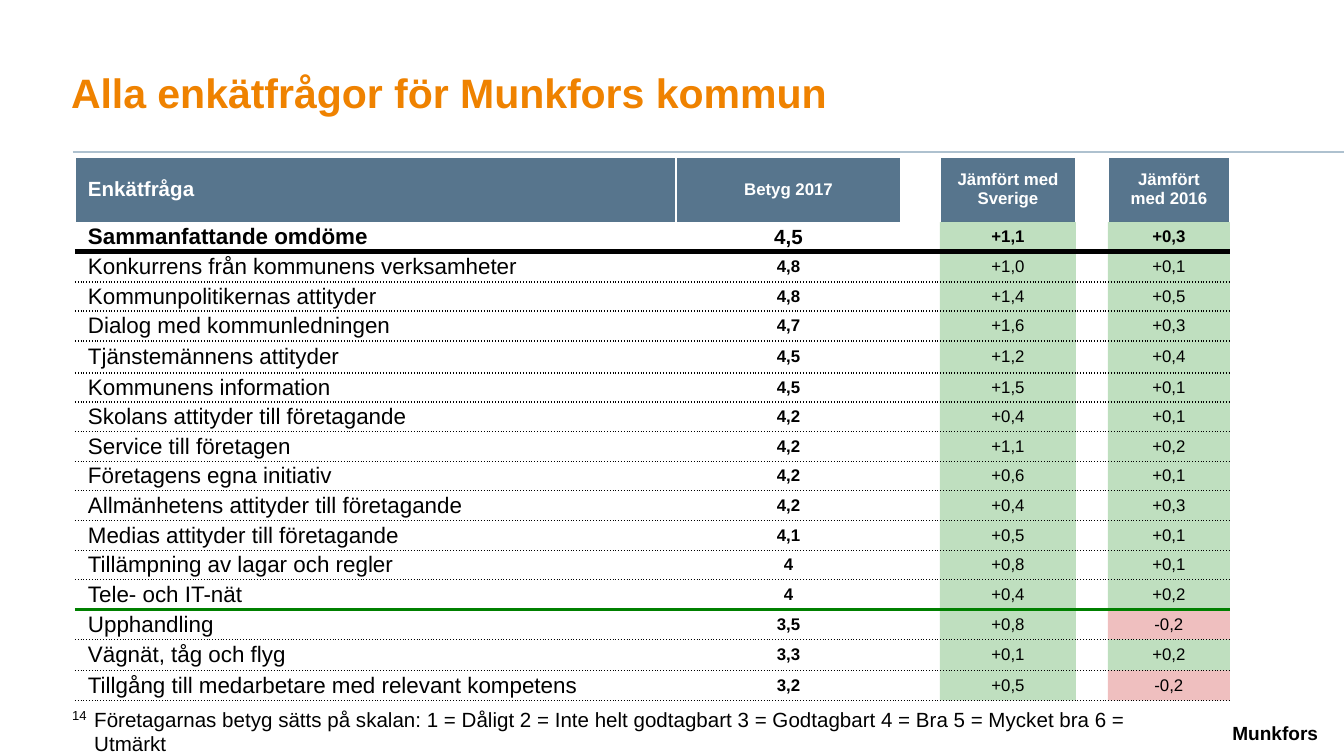
from dataclasses import dataclass
from typing import NamedTuple, Optional

from lxml.etree import SubElement
from pptx import Presentation
from pptx.dml.color import RGBColor
from pptx.enum.shapes import MSO_CONNECTOR as Link
from pptx.enum.text import MSO_ANCHOR as Anchor, MSO_AUTO_SIZE as Fit, PP_ALIGN as Align
from pptx.oxml.ns import qn
from pptx.util import Emu, Pt

SCALE = 914400 / 134.4
FONT = "Arial"
BLACK, WHITE, ORANGE = "000000", "FFFFFF", "EF8200"
SLATE, PALE, GREEN, RED = "57758D", "AEC1CF", "008000", "C00000"

COLS = [601, 225, 39, 136, 32, 122]
HEAD_H = 65
ROWS = [30, 30, 29, 30, 32, 29, 30, 30, 29, 30, 30, 29, 30, 30, 31, 30]
HEADS = ["Enkätfråga", "Betyg 2017", "", "Jämfört med Sverige", "", "Jämfört med 2016"]


class Score(NamedTuple):
    topic: str
    grade: str
    nation: str
    year: str


SCORES = [
    Score("Sammanfattande omdöme", "4,5", "+1,1", "+0,3"),
    Score("Konkurrens från kommunens verksamheter", "4,8", "+1,0", "+0,1"),
    Score("Kommunpolitikernas attityder", "4,8", "+1,4", "+0,5"),
    Score("Dialog med kommunledningen", "4,7", "+1,6", "+0,3"),
    Score("Tjänstemännens attityder", "4,5", "+1,2", "+0,4"),
    Score("Kommunens information", "4,5", "+1,5", "+0,1"),
    Score("Skolans attityder till företagande", "4,2", "+0,4", "+0,1"),
    Score("Service till företagen", "4,2", "+1,1", "+0,2"),
    Score("Företagens egna initiativ", "4,2", "+0,6", "+0,1"),
    Score("Allmänhetens attityder till företagande", "4,2", "+0,4", "+0,3"),
    Score("Medias attityder till företagande", "4,1", "+0,5", "+0,1"),
    Score("Tillämpning av lagar och regler", "4", "+0,8", "+0,1"),
    Score("Tele- och IT-nät", "4", "+0,4", "+0,2"),
    Score("Upphandling", "3,5", "+0,8", "-0,2"),
    Score("Vägnät, tåg och flyg", "3,3", "+0,1", "+0,2"),
    Score("Tillgång till medarbetare med relevant kompetens", "3,2", "+0,5", "-0,2"),
]


@dataclass
class Rule:
    color: str
    width: int = 1
    dash: str = "solid"


DOTS = Rule(BLACK, dash="sysDot")
EDGE = Rule(WHITE)
# Rules drawn below certain body rows; all the others are dotted.
BREAKS = {0: Rule(BLACK, 3), 12: Rule(GREEN, 2)}


@dataclass
class Style:
    size: float
    bold: bool = False
    color: str = BLACK
    align: Align = Align.LEFT


@dataclass
class Note:
    text: str
    box: tuple[int, int, int, int]
    style: Style
    anchor: Anchor = Anchor.TOP
    inset: bool = True
    wrap: bool = True


NOTES = [
    Note("Munkfors", (696, 704, 622, 40), Style(10.2, True, align=Align.RIGHT),
         Anchor.BOTTOM, inset=False),
    Note("14", (59, 707, 46, 17), Style(7), Anchor.MIDDLE),
    Note("Företagarnas betyg sätts på skalan: 1 = Dåligt 2 = Inte helt godtagbart "
         "3 = Godtagbart 4 = Bra 5 = Mycket bra 6 = Utmärkt",
         (81, 700, 1134, 39), Style(11), wrap=False),
]


def px(n: int) -> Emu:
    return Emu(round(n * SCALE))


def rgb(code: str) -> RGBColor:
    return RGBColor.from_string(code)


def put(frame, text: str, style: Style) -> None:
    frame.text = text
    para = frame.paragraphs[0]
    para.alignment = style.align
    font = para.font
    font.name, font.size, font.bold = FONT, Pt(style.size), style.bold
    font.color.rgb = rgb(style.color)


def place(shape, box: tuple[int, int, int, int]) -> None:
    shape.left, shape.top, shape.width, shape.height = map(px, box)


def pad(frame, side: int, top: int, base: int) -> None:
    frame.margin_left = frame.margin_right = px(side)
    frame.margin_top, frame.margin_bottom = px(top), px(base)


def add_title(slide, text: str) -> None:
    title = slide.shapes.title
    place(title, (71, 20, 1004, 102))
    frame = title.text_frame
    put(frame, text, Style(22, True, ORANGE))
    frame.auto_size = Fit.NONE
    frame.vertical_anchor = Anchor.BOTTOM
    pad(frame, 0, 0, 5)


def add_line(slide) -> None:
    line = slide.shapes.add_connector(Link.STRAIGHT, px(73), px(152), px(1344), px(152))
    line.line.color.rgb = rgb(PALE)
    line.line.width = Pt(1)
    SubElement(line._element.spPr, qn("a:effectLst"))


def add_note(slide, note: Note) -> None:
    frame = slide.shapes.add_textbox(*map(px, note.box)).text_frame
    put(frame, note.text, note.style)
    frame.word_wrap = note.wrap
    frame.vertical_anchor = note.anchor
    if not note.inset:
        pad(frame, 0, 0, 0)


def border(cell, **sides: Optional[Rule]) -> None:
    """Set the sides L, R, T and B; a side left out gets no line."""
    props = cell._tc.get_or_add_tcPr()
    for side in "LRTB":
        rule = sides.get(side)
        line = SubElement(props, qn(f"a:ln{side}"))
        if rule is None:
            SubElement(line, qn("a:noFill"))
            continue
        line.set("w", str(Pt(rule.width)))
        fill = SubElement(line, qn("a:solidFill"))
        SubElement(fill, qn("a:srgbClr"), val=rule.color)
        SubElement(line, qn("a:prstDash"), val=rule.dash)


def paint(cell, color: Optional[str], alpha: int = 100) -> None:
    if color is None:
        cell.fill.background()
        return
    cell.fill.solid()
    cell.fill.fore_color.rgb = rgb(color)
    if alpha < 100:
        tone = cell._tc.tcPr.find(f"{qn('a:solidFill')}/{qn('a:srgbClr')}")
        SubElement(tone, qn("a:alpha"), val=str(alpha * 1000))


def fill_cell(cell, text: str, style: Style) -> None:
    put(cell.text_frame, text, style)
    cell.vertical_anchor = Anchor.MIDDLE
    pad(cell, 13, 0, 0)


def add_grid(slide) -> None:
    frame = slide.shapes.add_table(len(SCORES) + 1, len(COLS), px(75), px(157),
                                   px(sum(COLS)), px(HEAD_H + sum(ROWS)))
    grid = frame.table
    grid.first_row = grid.horz_banding = False
    for col, width in zip(grid.columns, COLS):
        col.width = px(width)
    for row, height in zip(grid.rows, [HEAD_H, *ROWS]):
        row.height = px(height)

    for c, text in enumerate(HEADS):
        cell = grid.cell(0, c)
        fill_cell(cell, text, Style(9 if c else 11, True, WHITE,
                                    Align.CENTER if c else Align.LEFT))
        border(cell, L=EDGE, R=EDGE, T=EDGE)
        paint(cell, SLATE if text else None)

    for r, score in enumerate(SCORES):
        above = BREAKS.get(r - 1, DOTS) if r else None
        texts = [score.topic, score.grade, "", score.nation, "", score.year]
        sizes = [12, 9 if r else 11, 9, 9, 9, 9]
        for c, (text, size) in enumerate(zip(texts, sizes)):
            cell = grid.cell(r + 1, c)
            fill_cell(cell, text, Style(size, r == 0 or c == 1,
                                        align=Align.CENTER if c else Align.LEFT))
            border(cell, T=above, B=BREAKS.get(r, DOTS))
            tone = RED if text.startswith("-") else GREEN
            paint(cell, tone if c in (3, 5) else None, 25)


def main() -> None:
    deck = Presentation()
    deck.slide_width, deck.slide_height = px(1344), px(756)
    slide = deck.slides.add_slide(deck.slide_layouts[5])
    add_line(slide)
    add_title(slide, "Alla enkätfrågor för Munkfors kommun")
    for note in NOTES:
        add_note(slide, note)
    add_grid(slide)
    deck.save("out.pptx")


if __name__ == "__main__":
    main()
